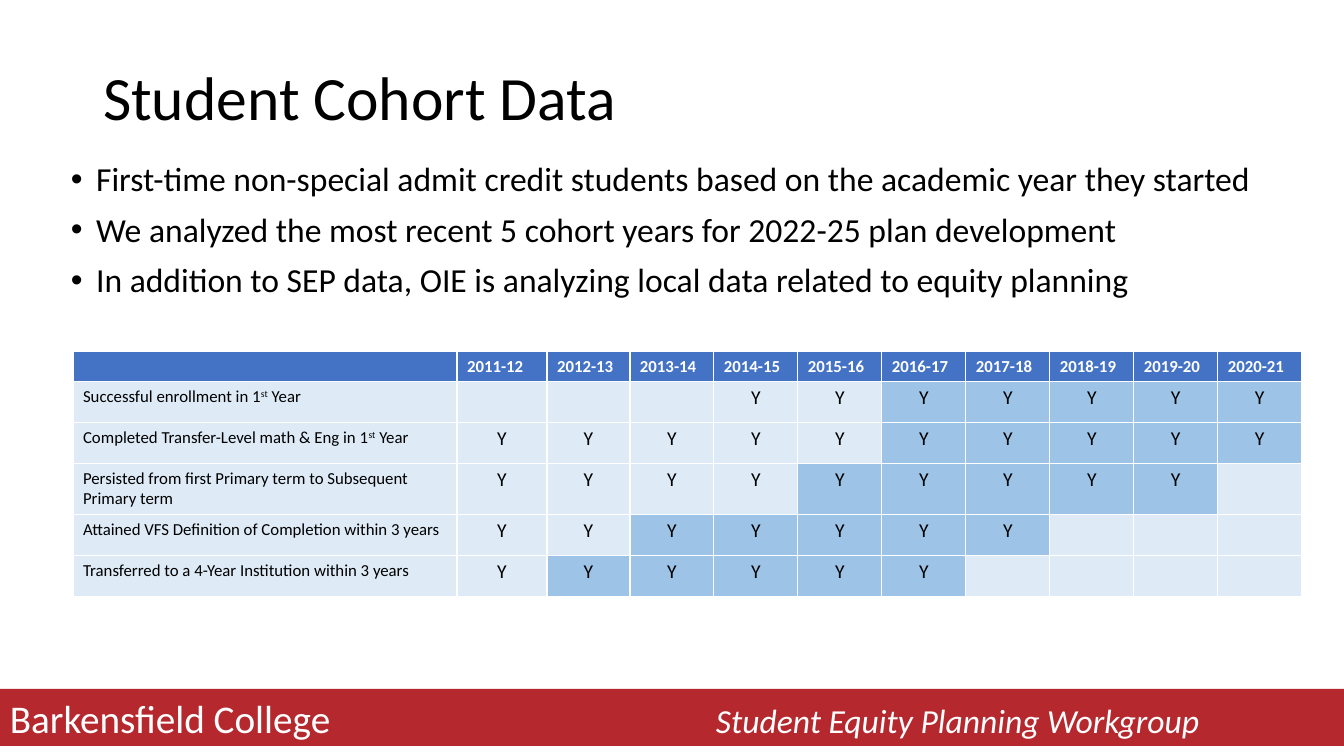
from pptx import Presentation
from pptx.dml.color import RGBColor
from pptx.enum.shapes import MSO_SHAPE
from pptx.enum.text import MSO_ANCHOR, PP_ALIGN
from pptx.oxml.ns import qn
from pptx.util import Pt
from lxml.etree import SubElement

BLACK = RGBColor(0x00, 0x00, 0x00)
WHITE = RGBColor(0xFF, 0xFF, 0xFF)
BLUE = RGBColor(0x44, 0x72, 0xC4)
PALE = RGBColor(0xDE, 0xEB, 0xF7)
MID = RGBColor(0x9D, 0xC3, 0xE6)
RED = RGBColor(0xB5, 0x29, 0x2E)


def px(*nums):
    return [round(n * 12192000 / 1344) for n in nums]


def write(par, text, size=12, color=BLACK, bold=False, italic=False, base=0, align=PP_ALIGN.LEFT):
    par.alignment = align
    run = par.add_run()
    run.text = text
    font = run.font
    font.name, font.size, font.bold, font.italic = "Calibri", Pt(size), bold, italic
    font.color.rgb = color
    if base:
        run._r.get_or_add_rPr().set("baseline", str(base * 1000))


deck = Presentation()
deck.slide_width, deck.slide_height = px(1344, 756)
slide = deck.slides.add_slide(deck.slide_layouts[5])
shapes = slide.shapes

title = shapes.title
title.left, title.top, title.width, title.height = px(93, 28, 1159, 146)
title.text_frame.vertical_anchor = MSO_ANCHOR.MIDDLE
head = title.text_frame.paragraphs[0]
head.line_spacing = 0.9
write(head, "Student Cohort Data", size=44)

points = [
    "First-time non-special admit credit students based on the academic year they started",
    "We analyzed the most recent 5 cohort years for 2022-25 plan development",
    "In addition to SEP data, OIE is analyzing local data related to equity planning",
]
body = shapes.add_textbox(*px(61, 158, 1252, 483)).text_frame
body.word_wrap = True
for i, point in enumerate(points):
    par = body.add_paragraph() if i else body.paragraphs[0]
    par.line_spacing = 0.9
    par.space_before = Pt(10)
    write(par, point, size=24)
    props = par._p.get_or_add_pPr()
    props.set("marL", "228600")
    props.set("indent", "-228600")
    SubElement(props, qn("a:buFont"), typeface="Arial")
    SubElement(props, qn("a:buChar"), char="•")

# label, first Y, first shaded Y, end of Y
rows = [
    ("Successful enrollment in 1st Year", 4, 6, 10),
    ("Completed Transfer-Level math & Eng in 1st Year", 1, 6, 10),
    ("Persisted from first Primary term to Subsequent Primary term", 1, 5, 9),
    ("Attained VFS Definition of Completion within 3 years", 1, 3, 7),
    ("Transferred to a 4-Year Institution within 3 years", 1, 2, 6),
]
widths = [384, 90, 83] + [84] * 8
heights = [30, 41, 41, 51, 41, 41]
table = shapes.add_table(6, 11, *px(73, 351, sum(widths), sum(heights))).table
table.horz_banding = False
for col, width in zip(table.columns, px(*widths)):
    col.width = width
for row, height in zip(table.rows, px(*heights)):
    row.height = height

for c in range(11):
    cell = table.cell(0, c)
    cell.fill.solid()
    cell.fill.fore_color.rgb = BLUE
    par = cell.text_frame.paragraphs[0]
    if c:
        write(par, f"{2010 + c}-{11 + c}", color=WHITE, bold=True)
    else:
        SubElement(par._p, qn("a:endParaRPr"), sz="1200")

for r, (label, first, shade, last) in enumerate(rows, 1):
    for c in range(11):
        cell = table.cell(r, c)
        cell.fill.solid()
        cell.fill.fore_color.rgb = MID if shade <= c <= last else PALE
        par = cell.text_frame.paragraphs[0]
        if c == 0:
            start, mark, rest = label.partition("1st")
            write(par, start + mark[:1])
            if mark:
                write(par, "st", base=30)
                write(par, rest)
        elif first <= c <= last:
            write(par, "Y", size=14, align=PP_ALIGN.CENTER)

band = shapes.add_shape(MSO_SHAPE.RECTANGLE, *px(0, 689, 1344, 57))
band.shadow.inherit = False
band.fill.solid()
band.fill.fore_color.rgb = RED
band.line.fill.background()
band.text_frame.vertical_anchor = MSO_ANCHOR.MIDDLE
foot = band.text_frame.paragraphs[0]
write(foot, "Barkensfield College\t", size=28, color=WHITE)
write(foot, "Student Equity Planning Workgroup", size=24, color=WHITE, italic=True)
tabs = SubElement(foot._p.get_or_add_pPr(), qn("a:tabLst"))
SubElement(tabs, qn("a:tab"), pos=str(px(706)[0]), algn="l")

deck.save("out.pptx")
